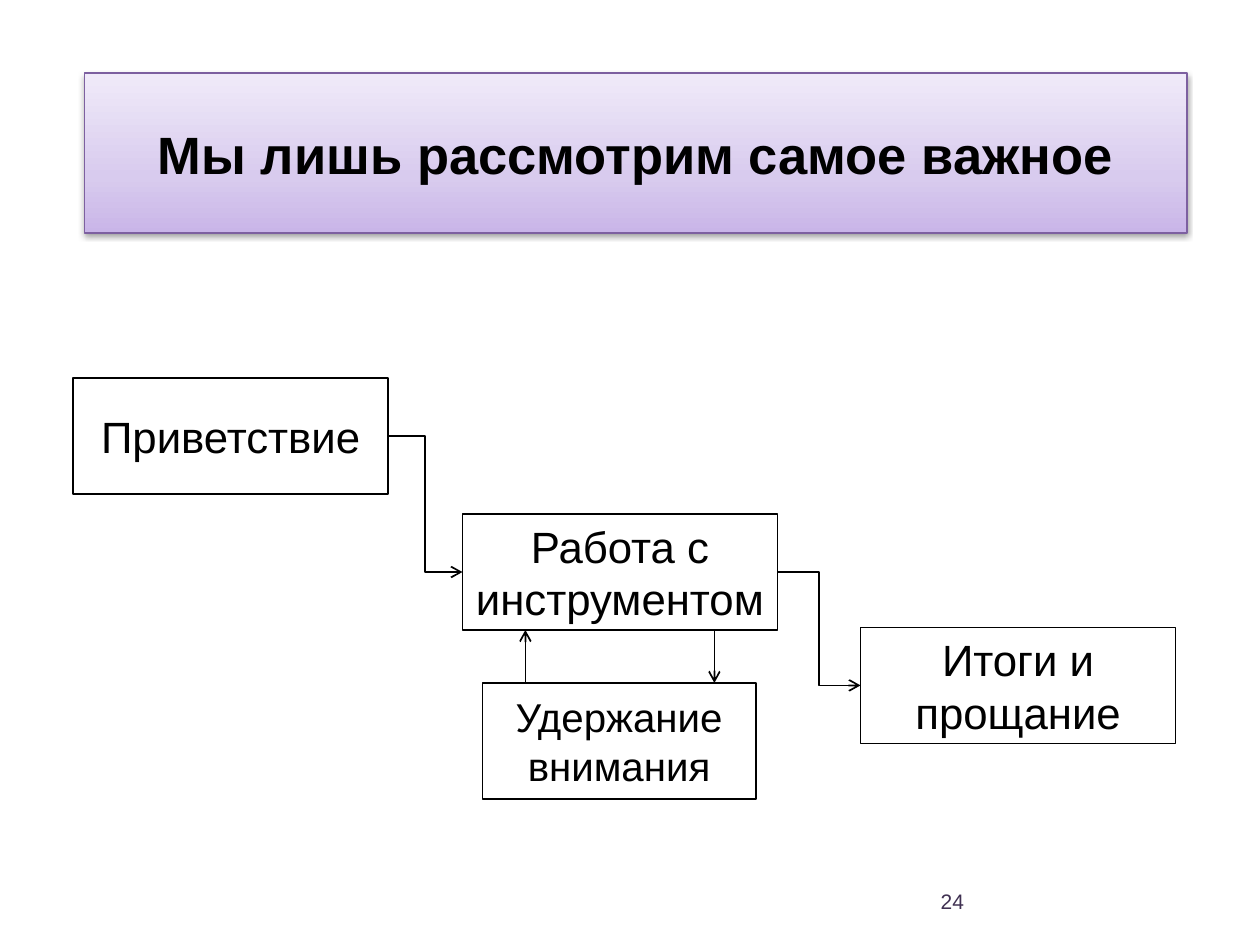
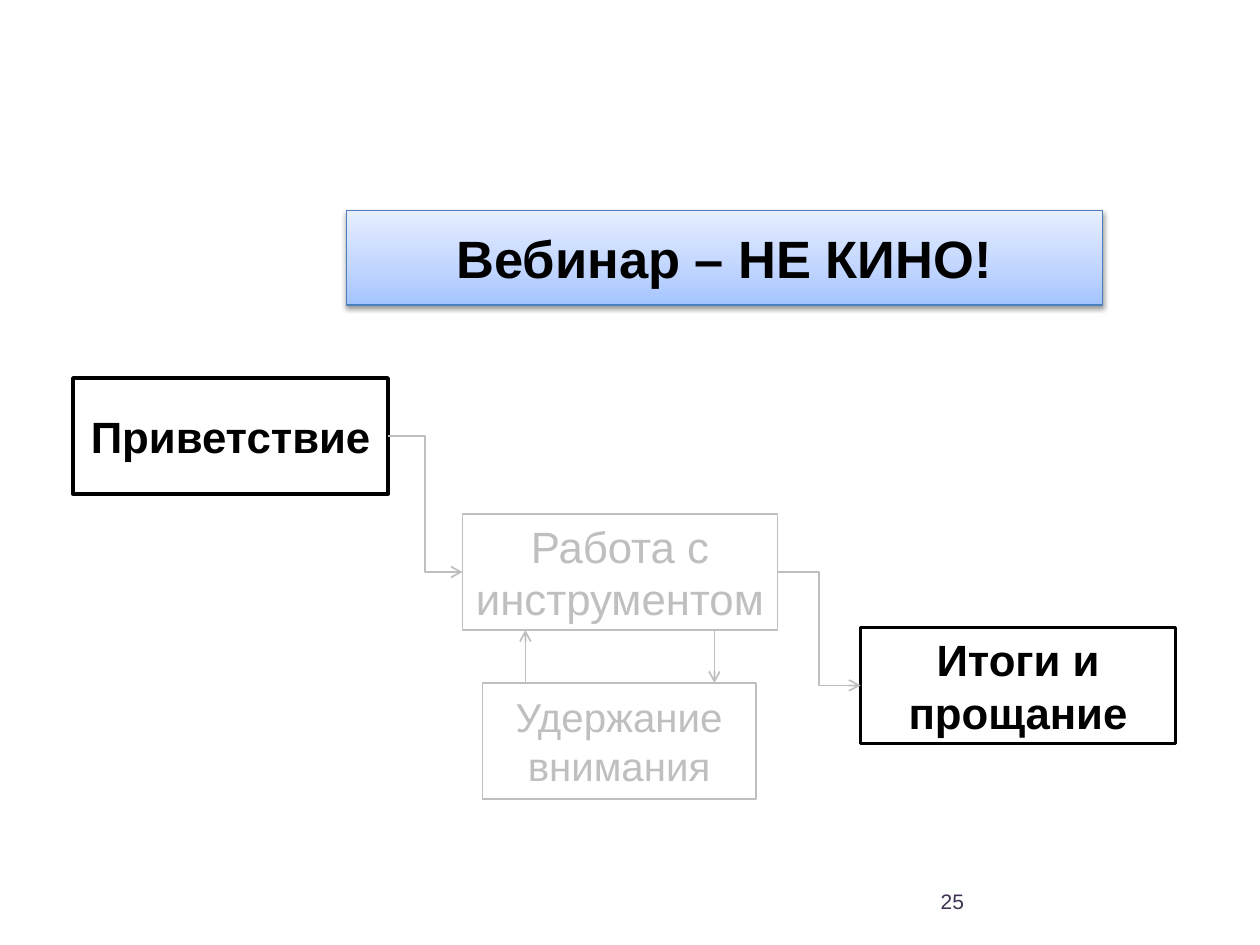
from dataclasses import dataclass

from lxml import etree
from pptx import Presentation
from pptx.dml.color import RGBColor
from pptx.enum import shapes, text
from pptx.oxml.ns import qn
from pptx.shapes.autoshape import Shape
from pptx.shapes.connector import Connector
from pptx.slide import Slide
from pptx.util import Inches, Pt

TOP, LEFT, BOTTOM, RIGHT = range(4)


@dataclass(frozen=True)
class Theme:
    font: str = "Arial"
    ink: str = "000000"
    muted: str = "BFBFBF"
    paper: str = "FFFFFF"
    number_color: str = "403152"
    title_size: float = 30
    number_size: float = 12
    thin: float = 1
    thick: float = 2
    title_line: float = 0.75


@dataclass(frozen=True)
class Box:
    left: float
    top: float
    width: float
    height: float

    @property
    def bottom(self) -> float:
        return self.top + self.height

    def lengths(self) -> list[int]:
        return [Inches(n) for n in (self.left, self.top, self.width, self.height)]


@dataclass(frozen=True)
class Step:
    label: str
    box: Box
    size: float = 25


@dataclass(frozen=True)
class Banner:
    title: str
    box: Box
    gradient: tuple[tuple[int, str], ...]
    border: str


@dataclass(frozen=True)
class FlowSlide:
    number: int
    banner: Banner
    highlighted: tuple[Step, ...] = ()


THEME = Theme()
STEP_WIDTH, STEP_HEIGHT = 2.5, 0.92
ARROW_INSET = 0.5
NUMBER_BOX = Box(5.42, 6.95, 2.33, 0.4)

GREETING = Step("Приветствие", Box(0.58, 3, STEP_WIDTH, STEP_HEIGHT))
TOOL_WORK = Step("Работа с инструментом", Box(3.67, 4.08, STEP_WIDTH, STEP_HEIGHT))
FAREWELL = Step("Итоги и прощание", Box(6.83, 4.98, STEP_WIDTH, STEP_HEIGHT))
ATTENTION = Step("Удержание внимания", Box(3.83, 5.42, 2.17, STEP_HEIGHT), 23)
STEPS = (GREETING, TOOL_WORK, FAREWELL, ATTENTION)

FLOW_SLIDES = (
    FlowSlide(24, Banner(
        "Мы лишь рассмотрим самое важное", Box(0.67, 0.58, 8.75, 1.27),
        ((0, "C9B5E8"), (35, "D8CBEE"), (100, "F0EAF9")), "7D60A0")),
    FlowSlide(25, Banner(
        "Вебинар – НЕ КИНО!", Box(2.75, 1.67, 6, 0.75),
        ((0, "A4C4FF"), (35, "BFD4FF"), (100, "E6EEFF")), "4B7EBC"),
        (GREETING, FAREWELL)),
)


def rgb(color: str) -> RGBColor:
    return RGBColor.from_string(color)


def write(shape: Shape, content: str, size: float, color: str,
          bold: bool = False, align: text.PP_ALIGN = text.PP_ALIGN.CENTER) -> None:
    frame = shape.text_frame
    frame.word_wrap = True
    frame.vertical_anchor = text.MSO_ANCHOR.MIDDLE
    paragraph = frame.paragraphs[0]
    paragraph.alignment = align
    run = paragraph.add_run()
    run.text = content
    run.font.name = THEME.font
    run.font.size = Pt(size)
    run.font.bold = bold
    run.font.color.rgb = rgb(color)


def set_line(item: Shape | Connector, color: str, width: float) -> None:
    item.line.color.rgb = rgb(color)
    item.line.width = Pt(width)


def add_color(parent: etree._Element, color: str) -> etree._Element:
    return etree.SubElement(parent, qn("a:srgbClr"), val=color)


def fill_gradient(shape: Shape, stops: tuple[tuple[int, str], ...]) -> None:
    """Fill upwards, from the first stop at the bottom to the last at the top."""
    shape.fill.gradient()
    shape.fill.gradient_angle = 90
    stop_list = shape._element.spPr.find(qn("a:gradFill")).find(qn("a:gsLst"))
    stop_list.clear()
    for percent, color in stops:
        add_color(etree.SubElement(stop_list, qn("a:gs"), pos=str(percent * 1000)), color)


def add_shadow(shape: Shape) -> None:
    shape.shadow.inherit = False
    effects = shape._element.spPr.find(qn("a:effectLst"))
    shadow = etree.SubElement(
        effects, qn("a:outerShdw"), blurRad=str(Pt(3.1)), dist=str(Pt(1.6)),
        dir="5400000", rotWithShape="0")
    etree.SubElement(add_color(shadow, THEME.ink), qn("a:alpha"), val="38000")


def add_banner(slide: Slide, banner: Banner) -> None:
    shape = slide.shapes.add_shape(shapes.MSO_SHAPE.RECTANGLE, *banner.box.lengths())
    fill_gradient(shape, banner.gradient)
    set_line(shape, banner.border, THEME.title_line)
    add_shadow(shape)
    write(shape, banner.title, THEME.title_size, THEME.ink, bold=True)


def add_number(slide: Slide, number: int) -> None:
    shape = slide.shapes.add_textbox(*NUMBER_BOX.lengths())
    write(shape, str(number), THEME.number_size, THEME.number_color,
          align=text.PP_ALIGN.RIGHT)


def add_step(slide: Slide, step: Step, color: str, highlighted: bool) -> Shape:
    shape = slide.shapes.add_shape(
        shapes.MSO_SHAPE.FLOWCHART_PROCESS, *step.box.lengths())
    shape.shadow.inherit = False
    shape.fill.solid()
    shape.fill.fore_color.rgb = rgb(THEME.paper)
    set_line(shape, color, THEME.thick if highlighted else THEME.thin)
    write(shape, step.label, step.size, color, bold=highlighted)
    return shape


def add_arrow(slide: Slide, kind: shapes.MSO_CONNECTOR, color: str,
              start: tuple[float, float] = (0, 0),
              end: tuple[float, float] = (0, 0)) -> Connector:
    arrow = slide.shapes.add_connector(kind, *[Inches(n) for n in (*start, *end)])
    set_line(arrow, color, THEME.thin)
    etree.SubElement(arrow.line._get_or_add_ln(), qn("a:tailEnd"), type="arrow")
    etree.SubElement(arrow._element.spPr, qn("a:effectLst"))
    return arrow


def add_flow(slide: Slide, highlighted: tuple[Step, ...]) -> None:
    """Draw the steps and arrows; highlighted steps stand out from muted ones."""
    base = THEME.muted if highlighted else THEME.ink
    drawn = {
        step: add_step(slide, step, THEME.ink if step in highlighted else base,
                       step in highlighted)
        for step in STEPS
    }
    for source, target in ((GREETING, TOOL_WORK), (TOOL_WORK, FAREWELL)):
        arrow = add_arrow(slide, shapes.MSO_CONNECTOR.ELBOW, base)
        arrow.begin_connect(drawn[source], RIGHT)
        arrow.end_connect(drawn[target], LEFT)

    work = TOOL_WORK.box
    up_x = work.left + ARROW_INSET
    down_x = work.left + work.width - ARROW_INSET
    lower = ATTENTION.box.top
    straight = shapes.MSO_CONNECTOR.STRAIGHT
    add_arrow(slide, straight, base, (up_x, lower), (up_x, work.bottom))
    add_arrow(slide, straight, base, (down_x, work.bottom), (down_x, lower))


def main() -> None:
    presentation = Presentation()
    presentation.slide_width = Inches(10)
    presentation.slide_height = Inches(7.5)
    for flow_slide in FLOW_SLIDES:
        slide = presentation.slides.add_slide(presentation.slide_layouts[6])
        add_banner(slide, flow_slide.banner)
        add_number(slide, flow_slide.number)
        add_flow(slide, flow_slide.highlighted)
    presentation.save("out.pptx")


if __name__ == "__main__":
    main()
